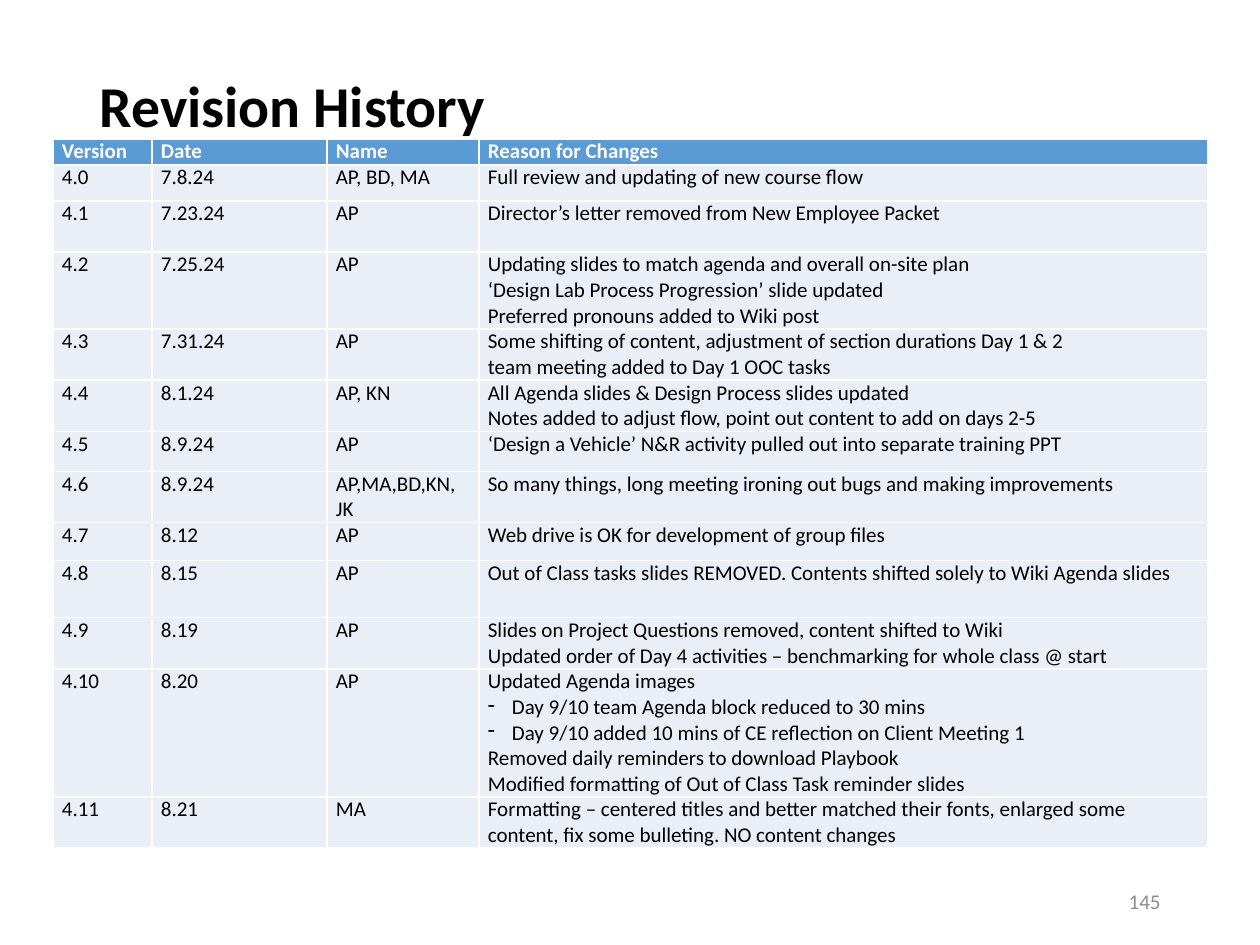
from lxml import etree
from pptx import Presentation
from pptx import util as u
from pptx.dml.color import RGBColor
from pptx.enum import text
from pptx.oxml import ns

# Content: each reason is a list of paragraphs, "- " marks a bullet
TITLE = "Revision History"
PAGE = "145"
HEADER = ("Version", "Date", "Name", ["Reason for Changes"])
REVISIONS = [
    ("4.0", "7.8.24", "AP, BD, MA", ["Full review and updating of new course flow"]),
    ("4.1", "7.23.24", "AP", ["Director’s letter removed from New Employee Packet"]),
    ("4.2", "7.25.24", "AP", [
        "Updating slides to match agenda and overall on-site plan",
        "‘Design Lab Process Progression’ slide updated",
        "Preferred pronouns added to Wiki post"]),
    ("4.3", "7.31.24", "AP", [
        "Some shifting of content, adjustment of section durations Day 1 & 2",
        "team meeting added to Day 1 OOC tasks"]),
    ("4.4", "8.1.24", "AP, KN", [
        "All Agenda slides & Design Process slides updated",
        "Notes added to adjust flow, point out content to add on days 2-5"]),
    ("4.5", "8.9.24", "AP", [
        "‘Design a Vehicle’ N&R activity pulled out into separate training PPT"]),
    ("4.6", "8.9.24", "AP,MA,BD,KN, JK", [
        "So many things, long meeting ironing out bugs and making improvements"]),
    ("4.7", "8.12", "AP", ["Web drive is OK for development of group files"]),
    ("4.8", "8.15", "AP", [
        "Out of Class tasks slides REMOVED. Contents shifted solely to Wiki Agenda slides"]),
    ("4.9", "8.19", "AP", [
        "Slides on Project Questions removed, content shifted to Wiki",
        "Updated order of Day 4 activities – benchmarking for whole class @ start"]),
    ("4.10", "8.20", "AP", [
        "Updated Agenda images",
        "- Day 9/10 team Agenda block reduced to 30 mins",
        "- Day 9/10 added 10 mins of CE reflection on Client Meeting 1",
        "Removed daily reminders to download Playbook",
        "Modified formatting of Out of Class Task reminder slides"]),
    ("4.11", "8.21", "MA", [
        "Formatting – centered titles and better matched their fonts, enlarged some "
        "content, fix some bulleting. NO content changes"]),
]
COL_WIDTHS = [99, 175, 152, 729]
ROW_HEIGHTS = [26, 36, 51, 77, 51, 51, 40, 51, 38, 57, 51, 128, 51]
COLORS = {"header": "5B9BD5", "row": "EAEFF7", "white": "FFFFFF",
          "black": "000000", "page": "8C8C8C"}
FONT = "Calibri"


def px(n):
    return u.Emu(round(n * 914400 / 126))


def style(p, size, color, bold=False):
    p.font.name, p.font.size, p.font.bold = FONT, u.Pt(size), bold
    p.font.color.rgb = RGBColor.from_string(COLORS[color])


def add_dash(p):
    pPr = p._p.get_or_add_pPr()
    pPr.set("marL", str(px(24)))
    pPr.set("indent", str(px(-24)))
    bullet = etree.Element(ns.qn("a:buChar"), char="-")
    pPr.insert_element_before(bullet, "a:tabLst", "a:defRPr", "a:extLst")


def fill_cell(cell, lines, is_header):
    cell.margin_left = cell.margin_right = px(9)
    cell.margin_top = cell.margin_bottom = 0
    cell.fill.solid()
    cell.fill.fore_color.rgb = RGBColor.from_string(COLORS["header" if is_header else "row"])
    tf = cell.text_frame
    for i, line in enumerate(lines):
        p = tf.add_paragraph() if i else tf.paragraphs[0]
        p.text = line.removeprefix("- ")
        style(p, 12, "white" if is_header else "black", is_header)
        if line.startswith("- "):
            add_dash(p)


prs = Presentation()
prs.slide_width, prs.slide_height = px(1260), px(945)
s = prs.slides.add_slide(prs.slide_layouts[5])

# Title, lifted above the table by its bottom margin
title = s.shapes.title
title.left, title.top, title.width, title.height = px(87), px(50), px(1086), px(183)
tf = title.text_frame
tf.auto_size = text.MSO_AUTO_SIZE.NONE
tf.vertical_anchor = text.MSO_ANCHOR.MIDDLE
tf.margin_bottom = px(72)
p = tf.paragraphs[0]
p.text = TITLE
p.alignment = text.PP_ALIGN.LEFT
p.line_spacing = 0.9
style(p, 33, "black", True)

# Revision table
rows = [HEADER] + REVISIONS
table = s.shapes.add_table(len(rows), len(COL_WIDTHS), px(53), px(139),
                           px(sum(COL_WIDTHS)), px(sum(ROW_HEIGHTS))).table
table.horz_banding = False
for col, width in zip(table.columns, COL_WIDTHS):
    col.width = px(width)
for r, (row, height) in enumerate(zip(rows, ROW_HEIGHTS)):
    table.rows[r].height = px(height)
    *short, reason = row
    for c, lines in enumerate([[value] for value in short] + [reason]):
        fill_cell(table.cell(r, c), lines, r == 0)

# Page number
tf = s.shapes.add_textbox(px(890), px(876), px(283), px(50)).text_frame
tf.word_wrap = True
tf.vertical_anchor = text.MSO_ANCHOR.MIDDLE
p = tf.paragraphs[0]
p.text = PAGE
p.alignment = text.PP_ALIGN.RIGHT
style(p, 12, "page")

prs.save("out.pptx")
